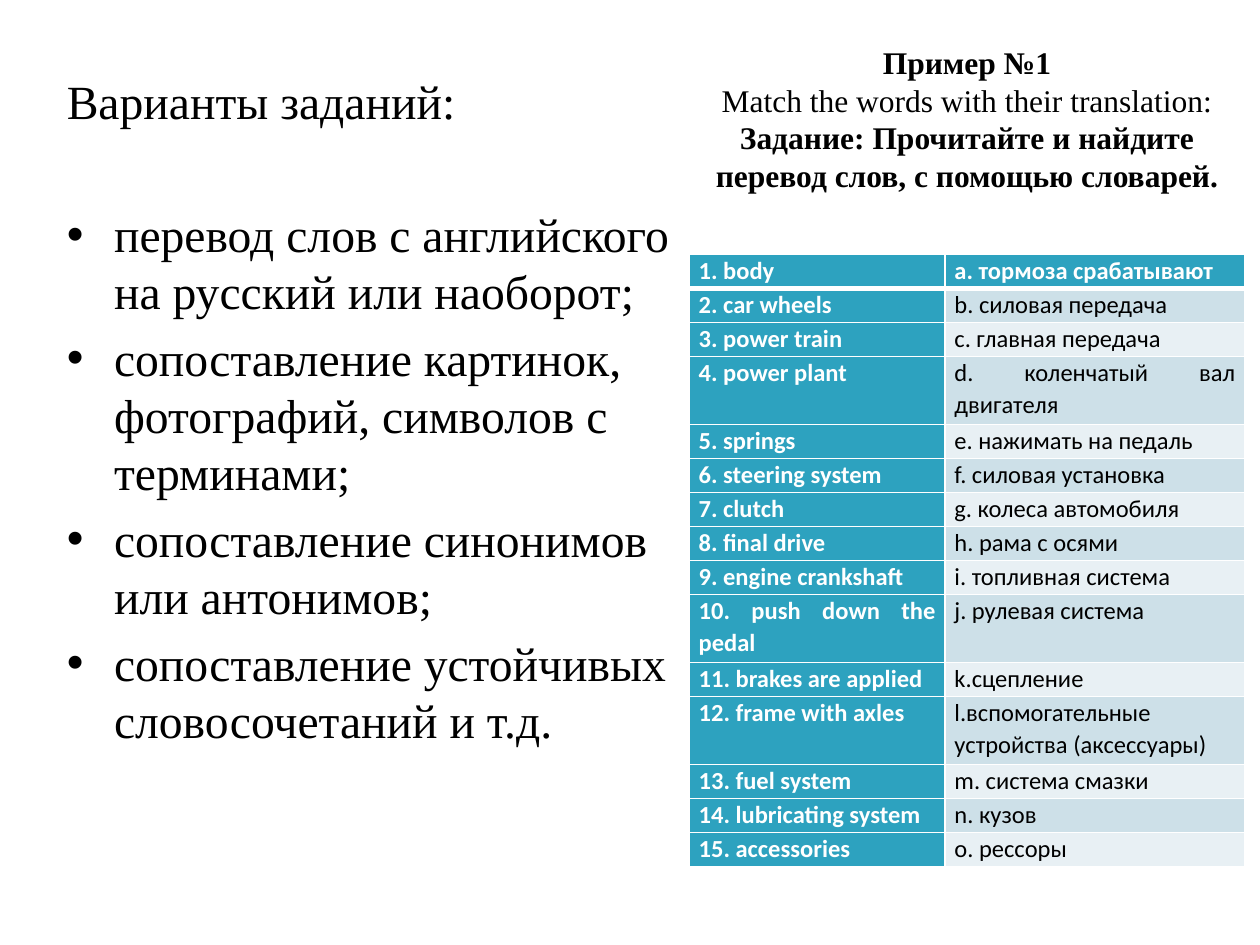
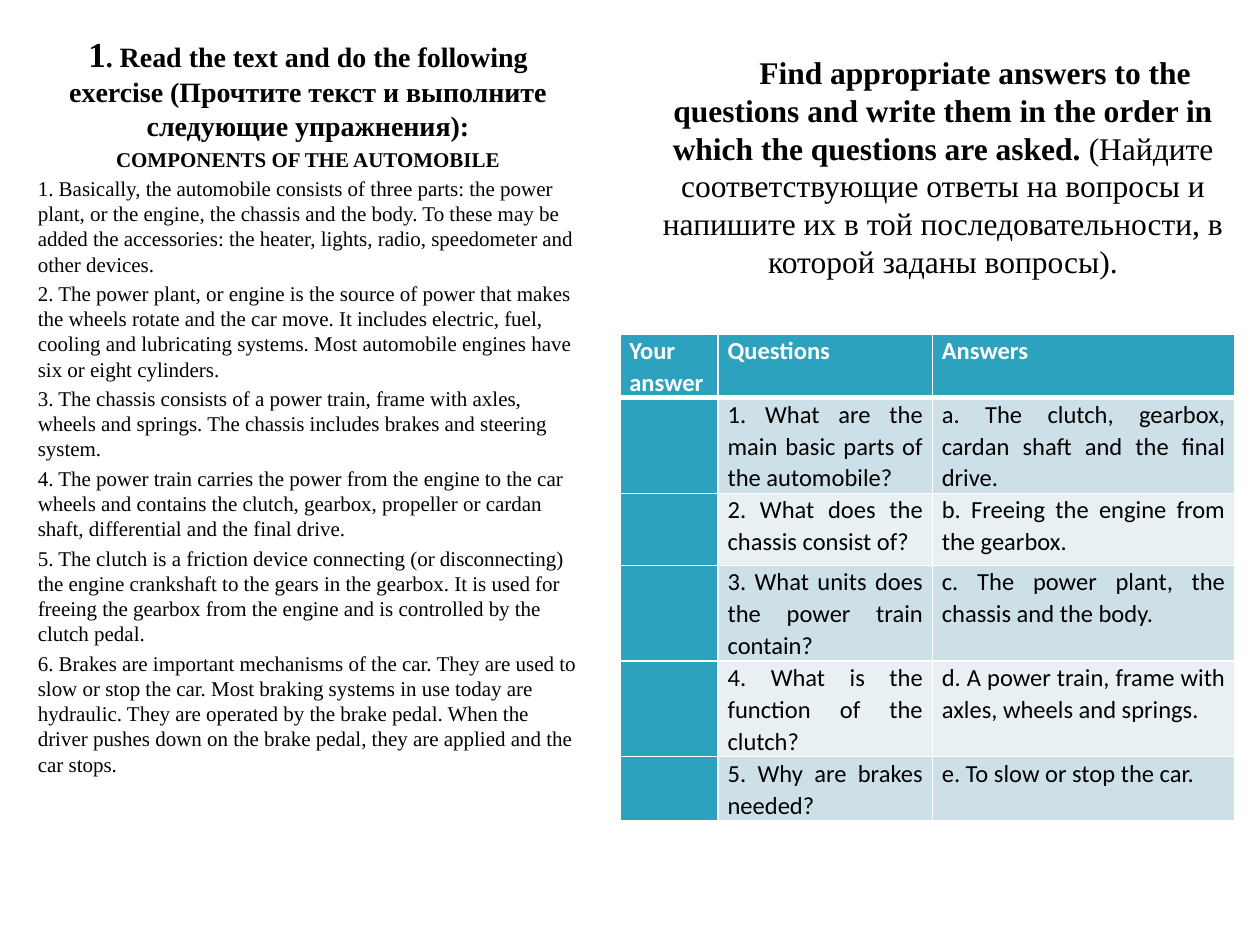
from dataclasses import dataclass

from lxml.etree import SubElement
from pptx import Presentation
from pptx.dml.color import RGBColor
from pptx.enum.shapes import MSO_SHAPE
from pptx.enum.text import MSO_ANCHOR, MSO_AUTO_SIZE, PP_ALIGN
from pptx.oxml.ns import qn
from pptx.util import Inches, Pt


@dataclass(frozen=True)
class Theme:
    ink: RGBColor = RGBColor(0, 0, 0)
    white: RGBColor = RGBColor(255, 255, 255)
    teal: RGBColor = RGBColor(0x2D, 0xA2, 0xBF)
    bands: tuple = (RGBColor(0xE8, 0xF0, 0xF4), RGBColor(0xCD, 0xE0, 0xE8))
    serif: str = "Times New Roman"
    sans: str = "Calibri"
    list_size: float = 27.2
    number_size: float = 20
    task_size: float = 18
    heading_size: float = 16
    cell_size: float = 14
    reading_size: float = 12
    space_share: float = 0.2
    cell_leading: float = 1.07
    border: float = 1
    header_border: float = 3


THEME = Theme()
GRID_COLUMNS, GRID_ROWS = 100, 75
CELL = Inches(0.1)

TASK_KINDS = [
    "перевод слов с английского на русский или наоборот;",
    "сопоставление картинок, фотографий, символов с терминами;",
    "сопоставление синонимов или антонимов;",
    "сопоставление устойчивых словосочетаний и т.д.",
]

WORD_PAIRS = [
    ("1. body", "a. тормоза срабатывают"),
    ("2. car wheels", "b. силовая передача"),
    ("3. power train", "c. главная передача"),
    ("4. power plant", "d. коленчатый вал двигателя"),
    ("5. springs", "e. нажимать на педаль"),
    ("6. steering system", "f. силовая установка"),
    ("7. clutch", "g. колеса автомобиля"),
    ("8. final drive", "h. рама с осями"),
    ("9. engine crankshaft", "i. топливная система"),
    ("10. push down the pedal", "j. рулевая система"),
    ("11. brakes are applied", "k.сцепление"),
    ("12. frame with axles", "l.вспомогательные устройства (аксессуары)"),
    ("13. fuel system", "m. система смазки"),
    ("14. lubricating system", "n. кузов"),
    ("15. accessories", "o. рессоры"),
]
TWO_LINE_PAIRS = (3, 9, 11)

READING = [
    "1. Basically, the automobile consists of three parts: the power plant, or the engine, "
    "the chassis and the body. To these may be added the accessories: the heater, lights, "
    "radio, speedometer and other devices.",
    "2. The power plant, or engine is the source of power that makes the wheels rotate and "
    "the car move. It includes electric, fuel, cooling and lubricating systems. Most "
    "automobile engines have six or eight cylinders.",
    "3. The chassis consists of a power train, frame with axles, wheels and springs. "
    "The chassis includes brakes and steering system.",
    "4. The power train carries the power from the engine to the car wheels and contains "
    "the clutch, gearbox, propeller or cardan shaft, differential and the final drive.",
    "5. The clutch is a friction device connecting (or disconnecting) the engine crankshaft "
    "to the gears in the gearbox. It is used for freeing the gearbox from the engine and is "
    "controlled by the clutch pedal.",
    "6. Brakes are important mechanisms of the car. They are used to slow or stop the car. "
    "Most braking systems in use today are hydraulic. They are operated by the brake pedal. "
    "When the driver pushes down on the brake pedal, they are applied and the car stops.",
]

QUESTIONS = [
    ("Your answer", "Questions", "Answers"),
    ("", "1. What are the main basic parts of the automobile?",
     "a. The clutch, gearbox, cardan shaft and the final drive."),
    ("", "2. What does the chassis consist of?", "b. Freeing the engine from the gearbox."),
    ("", "3. What units does the power train contain?",
     "c. The power plant, the chassis and the body."),
    ("", "4. What is the function of the clutch?",
     "d. A power train, frame with axles, wheels and springs."),
    ("", "5. Why are brakes needed?", "e. To slow or stop the car."),
]


def cells(count):
    return round(count * CELL)


def area(*grid):
    """Turn left, top, width and height in grid cells into lengths."""
    return [cells(count) for count in grid]


def style_run(span, size, bold=False, color=THEME.ink, name=THEME.serif):
    span.font.name = name
    span.font.size = Pt(size)
    span.font.bold = bold
    span.font.color.rgb = color


def write_spans(para, *spans):
    """Add (text, size, bold) spans to a paragraph."""
    for text, size, bold in spans:
        span = para.add_run()
        span.text = text
        style_run(span, size, bold)


def set_indent(para, left=0, first=0, bullet=None):
    props = para._p.get_or_add_pPr()
    props.set("marL", str(cells(left)))
    props.set("indent", str(cells(first)))
    if bullet:
        SubElement(props, qn("a:buChar"), char=bullet)
    else:
        SubElement(props, qn("a:buNone"))


def add_paragraph(frame, *spans, align=PP_ALIGN.LEFT, gap=0, left=0, first=0, bullet=None):
    """Fill the empty first paragraph of a frame, or append one after a gap in points."""
    is_first = not frame.paragraphs[0].runs
    para = frame.paragraphs[0] if is_first else frame.add_paragraph()
    set_indent(para, left, first, bullet)
    para.alignment = align
    para.space_before = Pt(0 if is_first else gap)
    write_spans(para, *spans)


def add_page(deck, body_area):
    """Add a page whose only placeholder is a body, and return it with the body's frame."""
    page = deck.slides.add_slide(deck.slide_layouts[1])
    title = page.shapes.title
    title.element.getparent().remove(title.element)
    body = page.placeholders[1]
    body.left, body.top, body.width, body.height = area(*body_area)
    body.text_frame.auto_size = MSO_AUTO_SIZE.NONE
    return page, body.text_frame


def add_task_box(page, box_area, top_margin=0.5):
    box = page.shapes.add_shape(MSO_SHAPE.RECTANGLE, *area(*box_area))
    box.shadow.inherit = False
    box.fill.solid()
    box.fill.fore_color.rgb = THEME.white
    box.line.fill.background()
    frame = box.text_frame
    frame.word_wrap = True
    frame.vertical_anchor = MSO_ANCHOR.TOP
    frame.margin_top = cells(top_margin)
    return frame


def set_borders(cell, is_header):
    props = cell._tc.get_or_add_tcPr()
    for index, side in enumerate(("lnL", "lnR", "lnT", "lnB")):
        heavy = is_header and side == "lnB"
        width = Pt(THEME.header_border if heavy else THEME.border)
        line = SubElement(props, qn(f"a:{side}"), w=str(width))
        fill = SubElement(line, qn("a:solidFill"))
        SubElement(fill, qn("a:srgbClr"), val=str(THEME.white))
        props.remove(line)
        props.insert(index, line)


def fill_cell(cell, text, row, column):
    is_strong = row == 0 or column == 0
    cell.fill.solid()
    cell.fill.fore_color.rgb = THEME.teal if is_strong else THEME.bands[row % 2]
    cell.margin_left = cell.margin_right = cells(0.75)
    cell.margin_top = cell.margin_bottom = 0
    set_borders(cell, row == 0)
    cell.text_frame.text = text
    para = cell.text_frame.paragraphs[0]
    para.alignment = PP_ALIGN.JUSTIFY
    para.line_spacing = THEME.cell_leading
    for span in para.runs:
        style_run(span, THEME.cell_size, is_strong,
                  THEME.white if is_strong else THEME.ink, THEME.sans)


def add_grid_table(page, left, top, widths, heights, rows):
    frame = page.shapes.add_table(len(rows), len(widths),
                                  *area(left, top, sum(widths), sum(heights)))
    table = frame.table
    for column, width in zip(table.columns, widths):
        column.width = cells(width)
    for line, height in zip(table.rows, heights):
        line.height = cells(height)
    for row, texts in enumerate(rows):
        for column, text in enumerate(texts):
            fill_cell(table.cell(row, column), text, row, column)


def build_matching_page(deck):
    page, body = add_page(deck, (4.3, 5.2, 50.4, 59.8))
    size = THEME.list_size
    gap = size * THEME.space_share
    heading_gap = size * 1.2 + 2 * gap
    add_paragraph(body, ("Варианты заданий:", size, False))
    for index, kind in enumerate(TASK_KINDS):
        add_paragraph(body, (kind, size, False), gap=gap if index else heading_gap,
                      left=3.75, first=-3.75, bullet="•")

    heights = [5.4 if row in TWO_LINE_PAIRS else 2.7 for row in range(len(WORD_PAIRS))]
    add_grid_table(page, 54.7, 20.2, (20.3, 23.8), heights, WORD_PAIRS)

    task = add_task_box(page, (54.7, 2.9, 44.1, 16.2))
    for text, bold in (
        ("Пример №1", True),
        ("Match the words with their translation:", False),
        ("Задание: Прочитайте и найдите перевод слов, с помощью словарей.", True),
    ):
        add_paragraph(task, (text, THEME.task_size, bold), align=PP_ALIGN.CENTER)


def build_reading_page(deck):
    page, body = add_page(deck, (2, 2.1, 44.9, 64.6))
    size = THEME.reading_size
    gap = size * THEME.space_share
    add_paragraph(
        body,
        ("1", THEME.number_size, True),
        (". Read the text and do the following exercise "
         "(Прочтите текст и выполните следующие упражнения):", THEME.heading_size, True),
        align=PP_ALIGN.CENTER)
    add_paragraph(body, ("COMPONENTS OF THE AUTOMOBILE", size, True),
                  align=PP_ALIGN.CENTER, gap=gap)
    for passage in READING:
        add_paragraph(body, (passage, size, False), gap=gap)

    task = add_task_box(page, (51.6, 1.9, 46.5, 23.9), top_margin=2.3)
    add_paragraph(
        task,
        ("Find appropriate answers to the questions and write them in the order in which "
         "the questions are asked. ", THEME.task_size, True),
        ("(Найдите соответствующие ответы на вопросы и напишите их в той "
         "последовательности, в которой заданы вопросы).", THEME.task_size, False),
        align=PP_ALIGN.CENTER, first=5.1)

    heights = [4.6] + [5.7] * 4 + [4.7]
    add_grid_table(page, 49.2, 26.5, (7.8, 17, 24), heights, QUESTIONS)


def main():
    deck = Presentation()
    deck.slide_width, deck.slide_height = cells(GRID_COLUMNS), cells(GRID_ROWS)
    build_matching_page(deck)
    build_reading_page(deck)
    deck.save("out.pptx")


if __name__ == "__main__":
    main()
